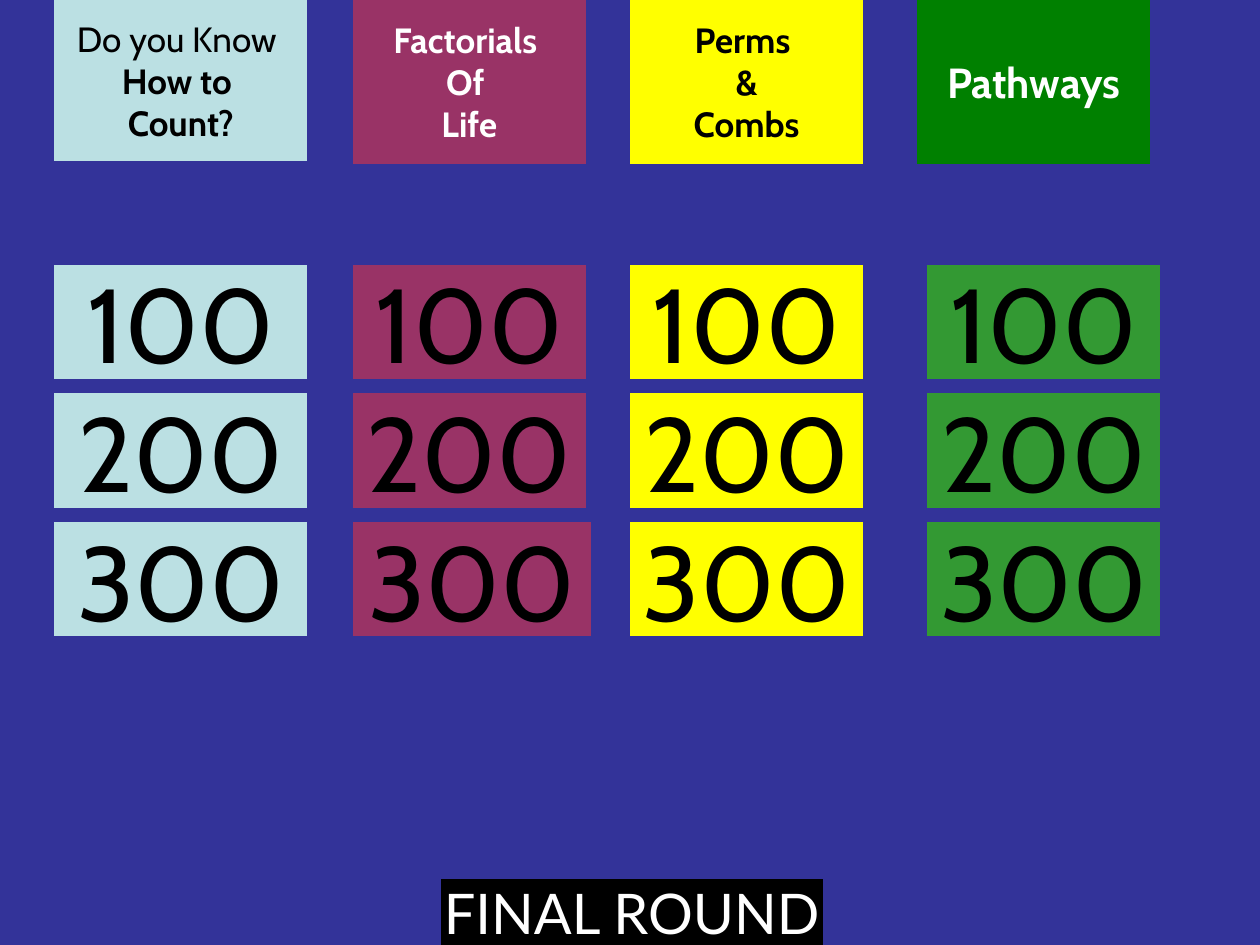
import pptx
import pptx.util
import pptx.dml.color
import pptx.enum.shapes
import pptx.enum.text

RGBColor = pptx.dml.color.RGBColor
NAVY = RGBColor(0x33, 0x33, 0x99)
ICE = RGBColor(0xBB, 0xE0, 0xE3)
PLUM = RGBColor(0x99, 0x33, 0x66)
YELLOW = RGBColor(0xFF, 0xFF, 0x00)
GREEN = RGBColor(0x33, 0x99, 0x33)
DARK_GREEN = RGBColor(0x00, 0x80, 0x00)
BLACK = RGBColor(0x00, 0x00, 0x00)
WHITE = RGBColor(0xFF, 0xFF, 0xFF)

VALUES = ["100", "200", "300"]
CATEGORIES = [
    {"lines": [("Do you Know ", False), ("How to ", True), ("Count?", True)],
     "head": (0.43, 2.01, 1.28), "head_fill": ICE, "ink": BLACK, "size": 20,
     "left": 0.43, "widths": [2.01, 2.01, 2.01], "fill": ICE},
    {"lines": [("Factorials ", True), ("Of ", True), ("Life", True)],
     "head": (2.8, 1.85, 1.3), "head_fill": PLUM, "ink": WHITE, "size": 20,
     "left": 2.8, "widths": [1.85, 1.85, 1.89], "fill": PLUM},
    {"lines": [("Perms ", True), ("&", True), ("Combs", True)],
     "head": (5, 1.85, 1.3), "head_fill": YELLOW, "ink": BLACK, "size": 20,
     "left": 5, "widths": [1.85, 1.85, 1.85], "fill": YELLOW},
    {"lines": [("Pathways", True)],
     "head": (7.28, 1.85, 1.3), "head_fill": DARK_GREEN, "ink": WHITE, "size": 24,
     "left": 7.36, "widths": [1.85, 1.85, 1.85], "fill": GREEN},
]
FIRST_ROW, ROW_STEP, TILE_HEIGHT = 2.1, 1.02, 0.91


def add_button(slide, box, fill, lines, size, ink, font="Cabin"):
    s = slide.shapes.add_shape(
        pptx.enum.shapes.MSO_SHAPE.ACTION_BUTTON_CUSTOM,
        *[pptx.util.Inches(v) for v in box])
    s.shadow.inherit = False
    s.fill.solid()
    s.fill.fore_color.rgb = fill
    s.line.fill.background()
    tf = s.text_frame
    tf.word_wrap = False
    tf.vertical_anchor = pptx.enum.text.MSO_ANCHOR.MIDDLE
    for i, (text, bold) in enumerate(lines):
        p = tf.add_paragraph() if i else tf.paragraphs[0]
        p.alignment = pptx.enum.text.PP_ALIGN.CENTER
        r = p.add_run()
        r.text = text
        r.font.name = font
        r.font.size = pptx.util.Pt(size)
        r.font.bold = bold
        r.font.color.rgb = ink


def main():
    prs = pptx.Presentation()
    prs.slide_width = pptx.util.Inches(10)
    prs.slide_height = pptx.util.Inches(7.5)
    slide = prs.slides.add_slide(prs.slide_layouts[6])
    slide.background.fill.solid()
    slide.background.fill.fore_color.rgb = NAVY

    for cat in CATEGORIES:
        left, width, height = cat["head"]
        add_button(slide, (left, 0, width, height), cat["head_fill"],
                   cat["lines"], cat["size"], cat["ink"])
        for row, (value, width) in enumerate(zip(VALUES, cat["widths"])):
            box = (cat["left"], FIRST_ROW + row * ROW_STEP, width, TILE_HEIGHT)
            add_button(slide, box, cat["fill"], [(value, False)], 60, BLACK)

    add_button(slide, (3.5, 6.98, 3.03, 0.52), BLACK,
               [("FINAL ROUND", False)], 32, WHITE, "Lato")
    prs.save("out.pptx")


if __name__ == "__main__":
    main()
